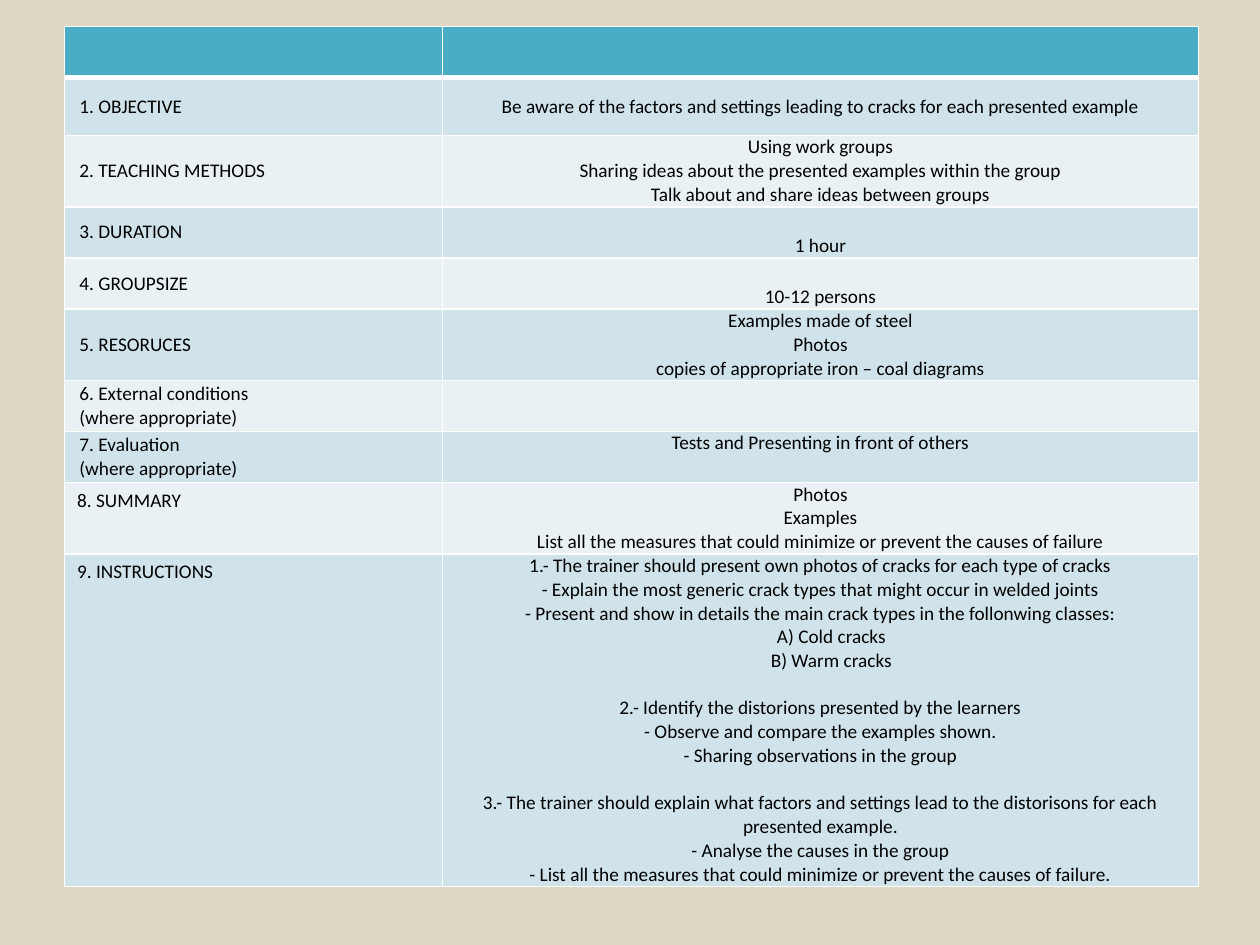
from dataclasses import dataclass

from lxml.etree import SubElement
from pptx import Presentation
from pptx.dml.color import RGBColor
from pptx.enum.text import MSO_ANCHOR, PP_ALIGN
from pptx.oxml.ns import qn
from pptx.util import Cm, Pt


@dataclass(frozen=True)
class Theme:
    font: str = "Calibri"
    size: float = 11
    text: str = "000000"
    background: str = "DDD9C3"
    header: str = "4BACC6"
    bands: tuple = ("D0E3EA", "E9F1F5")
    border: str = "FFFFFF"
    thin: float = 1
    thick: float = 3


@dataclass(frozen=True)
class Row:
    """One table row; \\v marks a line break inside a paragraph."""
    height: float
    label: str
    content: tuple = ()
    anchor: MSO_ANCHOR = MSO_ANCHOR.MIDDLE
    label_on_top: bool = False


THEME = Theme()
COLUMNS = (7.62, 15.24)
HEADER_HEIGHT = 1.03
LABEL_INDENT = 0.3
LIST_INDENT = 0.44
INDENTED = ("A)", "B)")
NEW_STEP = ("2.-", "3.-")

ROWS = (
    Row(1.17, "1. OBJECTIVE",
        ("Be aware of the factors and settings leading to cracks for each presented example",)),
    Row(1.43, "2. TEACHING METHODS",
        ("Using work groups\vSharing ideas about the presented examples within the group\v"
         "Talk about and share ideas between groups",)),
    Row(1.03, "3. DURATION", ("1 hour",), MSO_ANCHOR.BOTTOM),
    Row(1.03, "4. GROUPSIZE", ("10-12 persons",), MSO_ANCHOR.BOTTOM),
    Row(1.43, "5. RESORUCES",
        ("Examples made of steel\vPhotos\vcopies of appropriate iron – coal diagrams",)),
    Row(1.03, "6. External conditions\v(where appropriate)"),
    Row(1.03, "7. Evaluation\v(where appropriate)",
        ("Tests and Presenting in front of others",), MSO_ANCHOR.TOP),
    Row(1.43, "8. SUMMARY",
        ("Photos", "Examples",
         "List all the measures that could minimize or prevent the causes of failure"),
        label_on_top=True),
    Row(6.71, "9. INSTRUCTIONS",
        ("1.- The trainer should present own photos of cracks for each type of cracks\v"
         "- Explain the most generic crack types that might occur in welded joints",
         "- Present and show in details the main crack types in the follonwing classes:",
         "A) Cold cracks",
         "B) Warm cracks",
         "2.- Identify the distorions presented by the learners",
         "- Observe and compare the examples shown.",
         "- Sharing observations in the group",
         "3.- The trainer should explain what factors and settings lead to the distorisons "
         "for each presented example.",
         "- Analyse the causes in the group",
         "- List all the measures that could minimize or prevent the causes of failure."),
        label_on_top=True),
)


def rgb(value):
    return RGBColor.from_string(value)


def style_cell(cell, fill, top=THEME.thin, bottom=THEME.thin):
    """Draw the four borders, then the fill, in the order the schema asks for."""
    tcPr = cell._tc.get_or_add_tcPr()
    widths = {"lnL": THEME.thin, "lnR": THEME.thin, "lnT": top, "lnB": bottom}
    for tag, width in widths.items():
        ln = SubElement(tcPr, qn(f"a:{tag}"), w=str(Pt(width)))
        solid = SubElement(ln, qn("a:solidFill"))
        SubElement(solid, qn("a:srgbClr"), val=THEME.border)
    cell.fill.solid()
    cell.fill.fore_color.rgb = rgb(fill)


def set_margins(cell, left=0):
    cell.margin_left = Cm(left)
    cell.margin_right = cell.margin_top = cell.margin_bottom = 0


def write(cell, paragraphs, align):
    tf = cell.text_frame
    for i, text in enumerate(paragraphs):
        p = tf.add_paragraph() if i else tf.paragraphs[0]
        p.text = text
        p.alignment = align
        if text.startswith(INDENTED):
            p._p.get_or_add_pPr().set("marL", str(Cm(LIST_INDENT)))
        if i and text.startswith(NEW_STEP):
            p.space_before = Pt(THEME.size * 1.22)
        p.font.name = THEME.font
        p.font.size = Pt(THEME.size)
        p.font.color.rgb = rgb(THEME.text)


def fill_row(label, content, row):
    if not row.label_on_top:
        set_margins(label, LABEL_INDENT)
        label.vertical_anchor = MSO_ANCHOR.MIDDLE
    write(label, (row.label,), PP_ALIGN.LEFT)
    if row.content:
        set_margins(content)
        content.vertical_anchor = row.anchor
        write(content, row.content, PP_ALIGN.CENTER)


def add_plan_table(slide):
    heights = [HEADER_HEIGHT] + [row.height for row in ROWS]
    table = slide.shapes.add_table(
        len(heights), len(COLUMNS), Cm(1.3), Cm(0.53),
        Cm(sum(COLUMNS)), Cm(sum(heights))).table
    for column, width in zip(table.columns, COLUMNS):
        column.width = Cm(width)
    for table_row, height in zip(table.rows, heights):
        table_row.height = Cm(height)

    for cell in table.rows[0].cells:
        style_cell(cell, THEME.header, bottom=THEME.thick)
    for i, row in enumerate(ROWS):
        cells = list(table.rows[i + 1].cells)
        for cell in cells:
            style_cell(cell, THEME.bands[i % 2], top=THEME.thin if i else THEME.thick)
        fill_row(*cells, row)


def main():
    prs = Presentation()
    prs.slide_width, prs.slide_height = Cm(25.4), Cm(19.05)
    slide = prs.slides.add_slide(prs.slide_layouts[6])
    slide.background.fill.solid()
    slide.background.fill.fore_color.rgb = rgb(THEME.background)
    add_plan_table(slide)
    prs.save("out.pptx")


if __name__ == "__main__":
    main()
